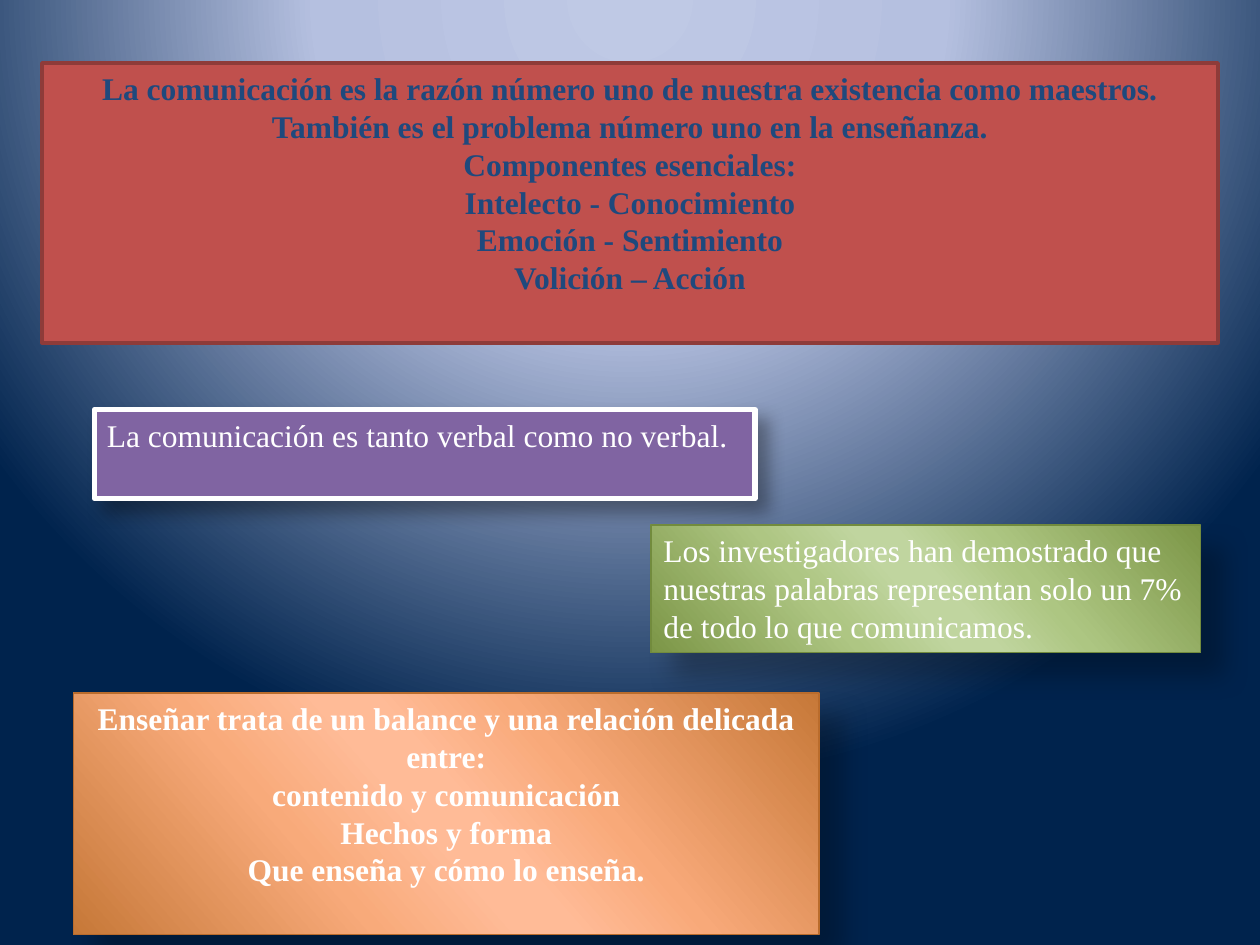
from dataclasses import dataclass
from typing import Optional

from lxml import etree
from pptx import Presentation
from pptx.dml.color import RGBColor
from pptx.enum.shapes import MSO_SHAPE
from pptx.enum.text import MSO_ANCHOR, MSO_AUTO_SIZE, PP_ALIGN
from pptx.oxml import parse_xml
from pptx.oxml.ns import nsdecls, qn
from pptx.util import Pt

RECTANGLE = MSO_SHAPE.RECTANGLE
TOP = MSO_ANCHOR.TOP
FIXED_SIZE = MSO_AUTO_SIZE.NONE
LEFT = PP_ALIGN.LEFT
CENTER = PP_ALIGN.CENTER
BLANK_LAYOUT = 6
SHADE_POSITIONS = (0, 33, 47, 53, 68, 100)
DIAGONAL = '<a:lin ang="8340000" scaled="0"/>'
SPOTLIGHT = '<a:path path="circle"><a:fillToRect l="50000" t="-80000" r="50000" b="180000"/></a:path>'


@dataclass(frozen=True)
class Theme:
    font: str = "Times New Roman"
    size: float = 18
    white: str = "FFFFFF"
    navy: str = "1F497D"
    red: str = "C0504D"
    dark_red: str = "8E3B39"
    purple: str = "8064A2"
    green_line: str = "728B3D"
    orange_line: str = "BA6C2C"
    shadow: str = "000000"
    backdrop: tuple[str, ...] = ("BFC9E5", "B5C0E0", "00234D")
    greens: tuple[str, ...] = ("7C9647", "ADC682", "C0D59F", "C0D59F", "AEC683", "7C9647")
    oranges: tuple[str, ...] = ("C67838", "F8A979", "FFBB97", "FFBB97", "F8AA7A", "C67838")


@dataclass(frozen=True)
class Shadow:
    blur: float
    distance: float
    opacity: int


@dataclass(frozen=True)
class Panel:
    left: float
    top: float
    width: float
    height: float
    fill: tuple[str, ...]
    line: str
    line_width: float
    lines: tuple[str, ...]
    text_color: str
    alignment: PP_ALIGN = LEFT
    bold: bool = False
    shadow: Optional[Shadow] = None


THEME = Theme()
SOFT_SHADOW = Shadow(10.2, 8, 35)
DEEP_SHADOW = Shadow(15, 18, 26)

PANELS = (
    Panel(24, 36, 672, 160, (THEME.red,), THEME.dark_red, 2, (
        "La comunicación es la razón número uno de nuestra existencia como maestros.",
        "También es el problema número uno en la enseñanza.",
        "Componentes esenciales:",
        "Intelecto - Conocimiento",
        "Emoción - Sentimiento",
        "Volición – Acción",
    ), THEME.navy, CENTER, True),
    Panel(54, 234, 377.5, 51, (THEME.purple,), THEME.white, 3, (
        "La comunicación es tanto verbal como no verbal.",
    ), THEME.white, shadow=SOFT_SHADOW),
    Panel(372, 300, 314, 72.7, THEME.greens, THEME.green_line, 0.75, (
        "Los investigadores han demostrado que",
        "nuestras palabras representan solo un 7%",
        "de todo lo que comunicamos.",
    ), THEME.white, shadow=DEEP_SHADOW),
    Panel(42, 396, 426, 138, THEME.oranges, THEME.orange_line, 0.75, (
        "Enseñar trata de un balance y una relación delicada entre:\vcontenido y comunicación",
        "Hechos y forma",
        "Que enseña y cómo lo enseña.",
    ), THEME.white, CENTER, True, DEEP_SHADOW),
)


def replace_with_gradient(properties: etree._Element, positions: tuple[int, ...],
                          colors: tuple[str, ...], direction: str) -> None:
    stops = "".join(
        f'<a:gs pos="{position * 1000}"><a:srgbClr val="{color}"/></a:gs>'
        for position, color in zip(positions, colors)
    )
    gradient = parse_xml(
        f'<a:gradFill {nsdecls("a")} rotWithShape="1"><a:gsLst>{stops}</a:gsLst>{direction}</a:gradFill>'
    )
    properties.replace(properties.find(qn("a:solidFill")), gradient)


def add_shadow(properties: etree._Element, shadow: Shadow) -> None:
    effects = properties.find(qn("a:effectLst"))
    outer = etree.SubElement(
        effects, qn("a:outerShdw"), blurRad=str(int(Pt(shadow.blur))),
        dist=str(int(Pt(shadow.distance))), dir="2700000", algn="tl", rotWithShape="0",
    )
    color = etree.SubElement(outer, qn("a:srgbClr"), val=THEME.shadow)
    etree.SubElement(color, qn("a:alpha"), val=str(shadow.opacity * 1000))


def add_panel(slide, panel: Panel) -> None:
    shape = slide.shapes.add_shape(
        RECTANGLE, Pt(panel.left), Pt(panel.top), Pt(panel.width), Pt(panel.height)
    )
    shape.fill.solid()
    shape.fill.fore_color.rgb = RGBColor.from_string(panel.fill[0])
    shape.line.color.rgb = RGBColor.from_string(panel.line)
    shape.line.width = Pt(panel.line_width)
    shape.shadow.inherit = False
    properties = shape.element.spPr
    if len(panel.fill) > 1:
        replace_with_gradient(properties, SHADE_POSITIONS, panel.fill, DIAGONAL)
    if panel.shadow:
        add_shadow(properties, panel.shadow)

    frame = shape.text_frame
    frame.word_wrap = True
    frame.auto_size = FIXED_SIZE
    frame.vertical_anchor = TOP
    frame.text = "\n".join(panel.lines)
    for paragraph in frame.paragraphs:
        paragraph.alignment = panel.alignment
        paragraph.font.name = THEME.font
        paragraph.font.size = Pt(THEME.size)
        paragraph.font.bold = panel.bold
        paragraph.font.color.rgb = RGBColor.from_string(panel.text_color)


def main() -> None:
    presentation = Presentation()
    presentation.slide_width = Pt(720)
    presentation.slide_height = Pt(540)
    slide = presentation.slides.add_slide(presentation.slide_layouts[BLANK_LAYOUT])
    slide.background.fill.solid()
    slide.background.fill.fore_color.rgb = RGBColor.from_string(THEME.backdrop[-1])
    background = next(slide.element.iter(qn("p:bgPr")))
    replace_with_gradient(background, (0, 40, 100), THEME.backdrop, SPOTLIGHT)
    for panel in PANELS:
        add_panel(slide, panel)
    presentation.save("out.pptx")


if __name__ == "__main__":
    main()
